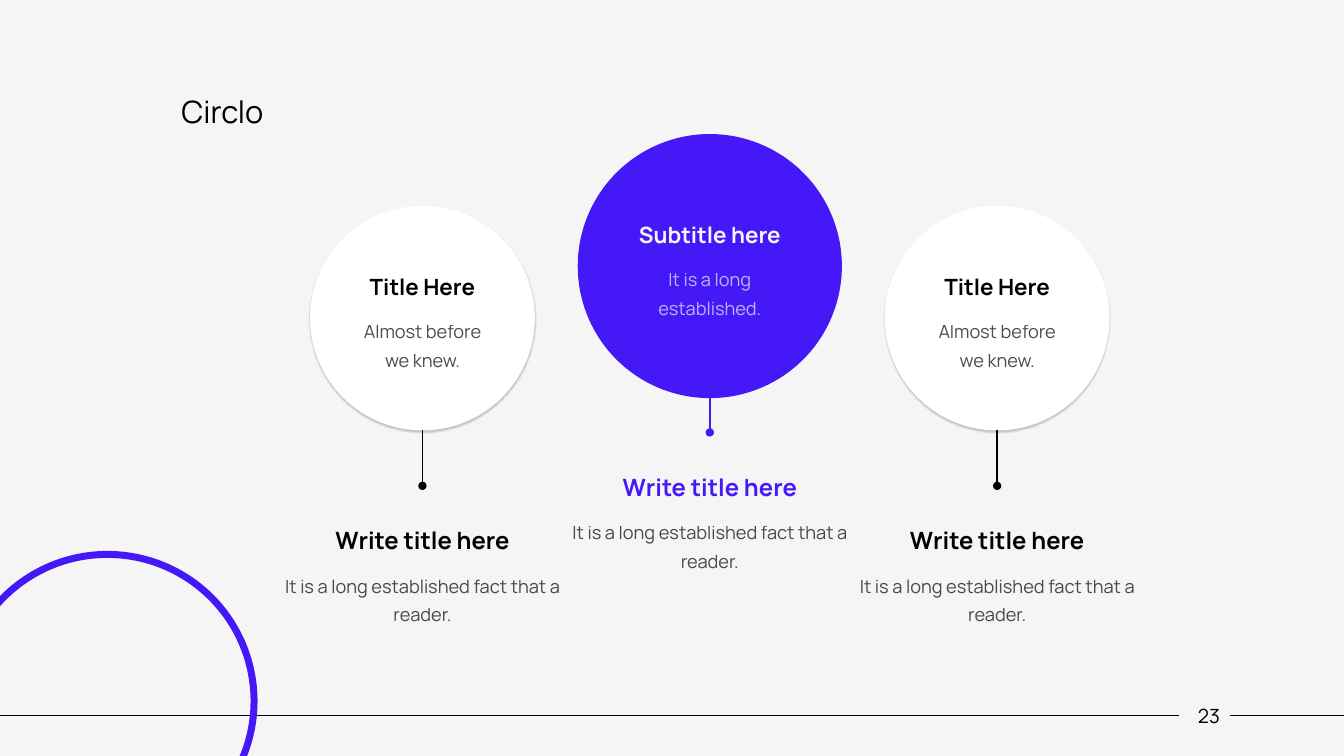
from lxml import etree
from pptx import Presentation
from pptx.dml.color import RGBColor
from pptx.enum.shapes import MSO_CONNECTOR, MSO_SHAPE
from pptx.enum.text import MSO_ANCHOR, MSO_AUTO_SIZE, PP_ALIGN
from pptx.oxml.ns import qn
from pptx.util import Inches, Pt

OVAL, STRAIGHT = MSO_SHAPE.OVAL, MSO_CONNECTOR.STRAIGHT
CENTER, LEFT, RIGHT = PP_ALIGN.CENTER, PP_ALIGN.LEFT, PP_ALIGN.RIGHT
TOP, MIDDLE = MSO_ANCHOR.TOP, MSO_ANCHOR.MIDDLE

COLORS = {"paper": "F5F5F5", "white": "FFFFFF", "black": "000000", "violet": "4519F7"}
FONT = "Manrope"
TITLE, PAGE_NUMBER = "Circlo", "23"
CAPTION = ("Write title here", "It is a long established fact that a reader.")
SIDE = {
    "words": ("Title Here", "Almost before we knew."),
    "top": 2.04, "size": 2.23, "stem": 0.55, "stem_width": 1,
    "caption_top": 5.13, "caption_height": 1.08,
    "fill": "white", "ink": "black", "accent": "black", "shadow": True,
}
MAIN = {
    "words": ("Subtitle here", "It is a long established."),
    "top": 1.33, "size": 2.62, "stem": 0.34, "stem_width": 1.5,
    "caption_top": 4.6, "caption_height": 1.19,
    "fill": "violet", "ink": "paper", "accent": "violet", "shadow": False,
}
COLUMNS = [SIDE, MAIN, SIDE]
WIDTH, HEIGHT = 13.33, 7.5
FIRST_CENTER, PITCH, CAPTION_WIDTH = 4.19, 2.85, 2.75
FOOTER_Y = 7.1
FOOTER_SPANS = [(0, 11.69), (12.2, WIDTH)]


def rgb(name):
    return RGBColor.from_string(COLORS[name])


def style(para, size, color, bold=False, align=CENTER, alpha=None):
    para.alignment = align
    for span in para.runs:
        span.font.name, span.font.size, span.font.bold = FONT, Pt(size), bold
        span.font.color.rgb = rgb(color)
        if alpha:
            tone = span.font.color._xFill.find(qn("a:srgbClr"))
            etree.SubElement(tone, qn("a:alpha"), val=str(alpha * 1000))


def fill_pair(frame, words, head_size, head_color, body_color):
    frame.word_wrap = True
    frame.text = "\n".join(words)
    head, body = frame.paragraphs
    style(head, head_size, head_color, bold=True)
    style(body, 13, body_color, alpha=70)
    head.line_spacing = body.line_spacing = 1.3
    body.space_before = Pt(10)


def add_box(page, left, top, width, height):
    box = page.shapes.add_textbox(Inches(left), Inches(top), Inches(width), Inches(height))
    frame = box.text_frame
    frame.margin_left = frame.margin_right = frame.margin_top = frame.margin_bottom = 0
    return frame


def add_circle(page, left, top, size):
    circle = page.shapes.add_shape(OVAL, Inches(left), Inches(top), Inches(size), Inches(size))
    circle.shadow.inherit = False
    circle.fill.background()
    circle.line.fill.background()
    return circle


def add_line(page, start, end, color, width, dot=False):
    line = page.shapes.add_connector(STRAIGHT, *[Inches(n) for n in (*start, *end)])
    line.line.color.rgb = rgb(color)
    line.line.width = Pt(width)
    if dot:
        etree.SubElement(line.line._get_or_add_ln(), qn("a:tailEnd"), type="oval")
    etree.SubElement(line._element.spPr, qn("a:effectLst"))


def add_soft_shadow(shape):
    effects = shape._element.spPr.find(qn("a:effectLst"))
    shadow = etree.SubElement(effects, qn("a:outerShdw"), blurRad=str(Pt(1)),
                              dist=str(Pt(1)), dir="5400000", rotWithShape="0")
    tone = etree.SubElement(shadow, qn("a:srgbClr"), val=COLORS["black"])
    etree.SubElement(tone, qn("a:alpha"), val="20000")


def add_column(page, column, center):
    size, bottom = column["size"], column["top"] + column["size"]
    circle = add_circle(page, center - size / 2, column["top"], size)
    circle.fill.solid()
    circle.fill.fore_color.rgb = rgb(column["fill"])
    if column["shadow"]:
        add_soft_shadow(circle)
    circle.text_frame.vertical_anchor = MIDDLE
    fill_pair(circle.text_frame, column["words"], 16, column["ink"], column["ink"])
    add_line(page, (center, bottom), (center, bottom + column["stem"]),
             column["accent"], column["stem_width"], dot=True)
    caption = add_box(page, center - CAPTION_WIDTH / 2, column["caption_top"],
                      CAPTION_WIDTH, column["caption_height"])
    fill_pair(caption, CAPTION, 17, column["accent"], "black")


def main():
    deck = Presentation()
    deck.slide_width, deck.slide_height = Inches(WIDTH), Inches(HEIGHT)
    page = deck.slides.add_slide(deck.slide_layouts[5])
    page.background.fill.solid()
    page.background.fill.fore_color.rgb = rgb("paper")

    title = page.shapes.title
    title.left, title.top, title.width, title.height = [
        Inches(n) for n in (1.7, 0.87, 1.13, 0.47)]
    frame = title.text_frame
    frame.text = TITLE
    frame.word_wrap, frame.auto_size = False, MSO_AUTO_SIZE.NONE
    frame.vertical_anchor = TOP
    style(frame.paragraphs[0], 22, "black", align=LEFT)

    for start, end in FOOTER_SPANS:
        add_line(page, (start, FOOTER_Y), (end, FOOTER_Y), "black", 0.5)
    ring = add_circle(page, -0.39, 5.5, 2.91)
    ring.line.color.rgb = rgb("violet")
    ring.line.width = Pt(5)

    number = add_box(page, 11.66, FOOTER_Y - 0.2, 0.44, 0.4)
    number.text, number.vertical_anchor = PAGE_NUMBER, MIDDLE
    style(number.paragraphs[0], 14, "black", align=RIGHT)

    for index, column in enumerate(COLUMNS):
        add_column(page, column, FIRST_CENTER + index * PITCH)
    deck.save("out.pptx")


if __name__ == "__main__":
    main()
